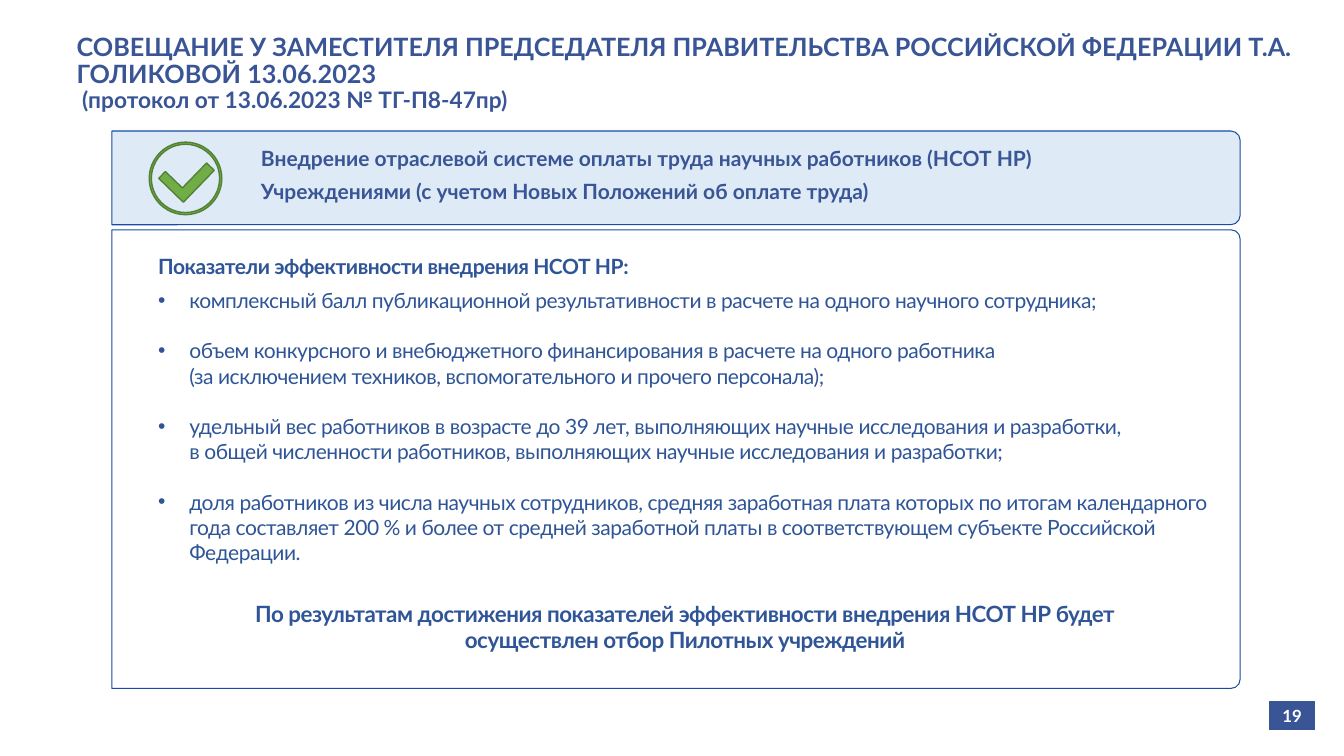
import copy

import pptx
import pptx.dml.color
import pptx.enum.shapes
import pptx.enum.text
import pptx.oxml.ns
import pptx.util
from lxml import etree
from pptx.util import Inches

SHAPE = pptx.enum.shapes.MSO_SHAPE
ALIGN = pptx.enum.text.PP_ALIGN
ANCHOR = pptx.enum.text.MSO_ANCHOR
FIT = pptx.enum.text.MSO_AUTO_SIZE
NAVY, BLUE, EDGE = "395595", "2F5597", "1B4AA4"
PALE, GREEN, MOSS, WHITE = "DEEBF7", "70AD47", "538035", "FFFFFF"

GOALS = [
    "комплексный балл публикационной результативности в расчете на одного научного сотрудника;",
    "объем конкурсного и внебюджетного финансирования в расчете на одного работника\n"
    "(за исключением техников, вспомогательного и прочего персонала);",
    "удельный вес работников в возрасте до 39 лет, выполняющих научные исследования и разработки,\n"
    "в общей численности работников, выполняющих научные исследования и разработки;",
    "доля работников из числа научных сотрудников, средняя заработная плата которых по итогам "
    "календарного года составляет 200 % и более от средней заработной платы в соответствующем "
    "субъекте Российской Федерации.",
]


def color(code):
    return pptx.dml.color.RGBColor.from_string(code)


def write(para, text, size=15, tint=NAVY, bold=True, tight=False,
          align=None, after=0, bullet=False):
    """Add text to a paragraph; each newline becomes a line break."""
    para.alignment = align
    para.space_after = pptx.util.Pt(after)
    if bullet:
        props = para._p.get_or_add_pPr()
        props.set("marL", str(Inches(0.31)))
        props.set("indent", str(-Inches(0.31)))
        font = etree.SubElement(props, pptx.oxml.ns.qn("a:buFont"))
        font.set("typeface", "Arial")
        mark = etree.SubElement(props, pptx.oxml.ns.qn("a:buChar"))
        mark.set("char", "•")
    for num, line in enumerate(text.split("\n")):
        if num:
            para.add_line_break()
            para._p[-1].append(copy.deepcopy(run._r.rPr))
        run = para.add_run()
        run.text = line
        run.font.name = "Lato"
        run.font.size = pptx.util.Pt(size)
        run.font.bold = bold
        run.font.color.rgb = color(tint)
        if tight:
            run.font._element.set("spc", "-30")


def add_box(slide, left, top, width, height):
    box = slide.shapes.add_textbox(Inches(left), Inches(top), Inches(width), Inches(height))
    frame = box.text_frame
    frame.word_wrap = True
    frame.auto_size = FIT.SHAPE_TO_FIT_TEXT
    return frame


def add_form(slide, kind, left, top, width, height, adj, fill, edge, line, turn=0):
    form = slide.shapes.add_shape(kind, Inches(left), Inches(top), Inches(width), Inches(height))
    form.shadow.inherit = False
    form.rotation = turn
    for num, value in enumerate(adj):
        form.adjustments[num] = value
    if fill:
        form.fill.solid()
        form.fill.fore_color.rgb = color(fill)
    else:
        form.fill.background()
    form.line.color.rgb = color(edge)
    form.line.width = pptx.util.Pt(line)


def add_panel(slide, top, height, curve, fill=None):
    """Draw a full-width panel with its right corners rounded."""
    left, width = 1.11, 11.19
    shift = (width - height) / 2
    add_form(slide, SHAPE.ROUND_2_SAME_RECTANGLE, left + shift, top - shift,
             height, width, (curve, 0), fill, EDGE, 0.75, 90)


def add_title(slide):
    title = slide.shapes.title
    title.left, title.top = Inches(0.66), Inches(0.27)
    title.width, title.height = Inches(12.68), Inches(0.93)
    frame = title.text_frame
    frame.word_wrap = True
    frame.auto_size = FIT.NONE
    frame.vertical_anchor = ANCHOR.MIDDLE
    para = frame.paragraphs[0]
    para.line_spacing = 0.9
    write(para, "СОВЕЩАНИЕ У ЗАМЕСТИТЕЛЯ ПРЕДСЕДАТЕЛЯ ПРАВИТЕЛЬСТВА РОССИЙСКОЙ ФЕДЕРАЦИИ Т.А. "
          "ГОЛИКОВОЙ 13.06.2023", size=18, align=ALIGN.LEFT)
    para.add_line_break()
    para._p[-1].append(copy.deepcopy(para.runs[0]._r.rPr))
    write(para, " (протокол от 13.06.2023 № ТГ-П8-47пр)", size=16.2,
          align=ALIGN.LEFT, after=12)


def add_page(slide):
    table = slide.shapes.add_table(1, 1, Inches(12.58), Inches(6.95),
                                   Inches(0.47), Inches(0.3)).table
    table.first_row = table.horz_banding = False
    cell = table.cell(0, 0)
    cell.fill.solid()
    cell.fill.fore_color.rgb = color(NAVY)
    cell.vertical_anchor = ANCHOR.MIDDLE
    write(cell.text_frame.paragraphs[0], "19", size=12, tint=WHITE, align=ALIGN.CENTER)


def add_check(slide):
    add_form(slide, SHAPE.DONUT, 1.48, 1.41, 0.72, 0.72, (0.03,), GREEN, MOSS, 1)
    add_form(slide, SHAPE.CORNER, 1.63, 1.56, 0.44, 0.34, (0.31, 0.28), GREEN, MOSS, 1, 314.1)


def main():
    deck = pptx.Presentation()
    deck.slide_width, deck.slide_height = Inches(13.33), Inches(7.5)
    slide = deck.slides.add_slide(deck.slide_layouts[5])
    add_title(slide)
    add_page(slide)
    add_panel(slide, 2.28, 4.55, 0.02)
    add_panel(slide, 1.3, 0.93, 0.1, PALE)
    add_check(slide)

    head = add_box(slide, 2.49, 1.39, 9.63, 0.69)
    write(head.paragraphs[0], "Внедрение отраслевой системе оплаты труда научных работников (НСОТ НР)",
          align=ALIGN.JUSTIFY, after=6)
    write(head.add_paragraph(), "Учреждениями (с учетом Новых Положений об оплате труда)",
          align=ALIGN.JUSTIFY, after=6)

    body = add_box(slide, 1.47, 2.47, 10.65, 3.21)
    write(body.paragraphs[0], "Показатели эффективности внедрения НСОТ НР:",
          tint=BLUE, tight=True, align=ALIGN.JUSTIFY, after=6)
    for goal in GOALS:
        write(body.add_paragraph(), goal, tint=BLUE, bold=False, tight=True, bullet=True,
              after=0 if goal == GOALS[-1] else 18)

    foot = add_box(slide, 2.31, 5.9, 8.97, 0.64)
    write(foot.paragraphs[0], "По результатам достижения показателей эффективности внедрения НСОТ НР "
          "будет осуществлен отбор Пилотных учреждений",
          size=16, tint=BLUE, tight=True, align=ALIGN.CENTER)
    deck.save("out.pptx")


if __name__ == "__main__":
    main()
